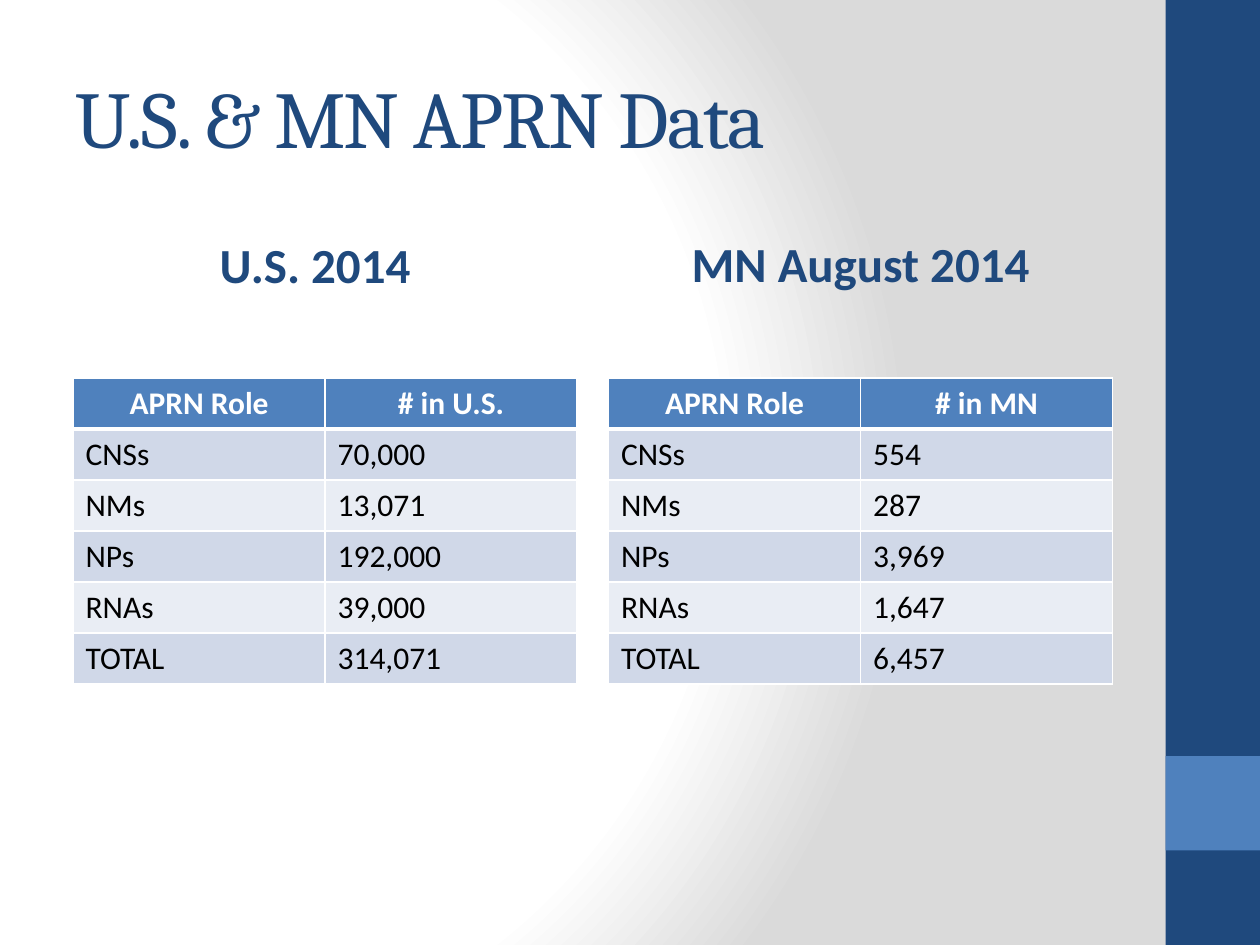
"""Build the slide that sets U.S. and Minnesota APRN counts side by side."""
from dataclasses import dataclass

import pptx
import pptx.dml.color
import pptx.enum.shapes
import pptx.enum.text
import pptx.oxml
import pptx.oxml.ns
import pptx.util

Inches = pptx.util.Inches
Pt = pptx.util.Pt
RGBColor = pptx.dml.color.RGBColor
Align = pptx.enum.text.PP_ALIGN
Anchor = pptx.enum.text.MSO_ANCHOR

NAVY = RGBColor(0x1F, 0x49, 0x7D)
BLUE = RGBColor(0x4F, 0x81, 0xBD)
BAND = RGBColor(0xD0, 0xD8, 0xE8)
PALE = RGBColor(0xE9, 0xED, 0xF4)
WHITE = RGBColor(0xFF, 0xFF, 0xFF)
BLACK = RGBColor(0x00, 0x00, 0x00)
GREY = RGBColor(0xDA, 0xDA, 0xDA)

ROLES = ("CNSs", "NMs", "NPs", "RNAs", "TOTAL")
ROW = 0.405


@dataclass(frozen=True)
class Style:
    font: str
    size: float
    color: RGBColor
    bold: bool = False


@dataclass(frozen=True)
class Label:
    text: str
    box: tuple[float, float, float, float]
    style: Style
    anchor: Anchor
    align: Align
    space: float = 0


@dataclass(frozen=True)
class Grid:
    left: float
    head: str
    counts: tuple[str, ...]


@dataclass(frozen=True)
class Block:
    top: float
    height: float
    color: RGBColor


TITLE = Style("Cambria", 46, NAVY)
SUB = Style("Calibri", 28, NAVY, True)
HEAD = Style("Calibri", 18, WHITE, True)
BODY = Style("Calibri", 18, BLACK)

BLOCKS = (Block(0, 7.5, NAVY), Block(6, 0.75, BLUE))
LABELS = (
    Label("U.S. & MN APRN Data", (0.5, 0.3, 8.33, 1.25), TITLE, Anchor.MIDDLE, Align.LEFT, -1),
    Label("U.S. 2014", (0.5, 1.68, 4, 0.7), SUB, Anchor.BOTTOM, Align.CENTER),
    Label("MN August 2014", (4.83, 1.67, 4, 0.7), SUB, Anchor.BOTTOM, Align.CENTER),
)
GRIDS = (
    Grid(0.58, "# in U.S.", ("70,000", "13,071", "192,000", "39,000", "314,071")),
    Grid(4.83, "# in MN", ("554", "287", "3,969", "1,647", "6,457")),
)


def paint(slide) -> None:
    stops = "".join(
        f'<a:gs pos="{pos * 1000}"><a:srgbClr val="{color}"/></a:gs>'
        for pos, color in ((0, WHITE), (75, WHITE), (100, GREY))
    )
    back = pptx.oxml.parse_xml(
        f'<p:bg {pptx.oxml.ns.nsdecls("p", "a")}><p:bgPr><a:gradFill rotWithShape="1">'
        f'<a:gsLst>{stops}</a:gsLst><a:path path="circle">'
        '<a:fillToRect l="20000" t="50000" r="100000" b="50000"/></a:path>'
        '</a:gradFill><a:effectLst/></p:bgPr></p:bg>'
    )
    slide.element.cSld.insert(0, back)


def write(frame, text: str, style: Style, align: Align) -> None:
    frame.text = text
    para = frame.paragraphs[0]
    para.alignment = align
    font = para.runs[0].font
    font.name, font.size, font.bold = style.font, Pt(style.size), style.bold
    font.color.rgb = style.color


def add_block(slide, block: Block) -> None:
    rect = slide.shapes.add_shape(
        pptx.enum.shapes.MSO_SHAPE.RECTANGLE,
        Inches(9.25), Inches(block.top), Inches(0.75), Inches(block.height),
    )
    rect.shadow.inherit = False
    rect.fill.solid()
    rect.fill.fore_color.rgb = block.color
    rect.line.fill.background()


def add_label(slide, label: Label) -> None:
    frame = slide.shapes.add_textbox(*map(Inches, label.box)).text_frame
    frame.word_wrap = True
    frame.vertical_anchor = label.anchor
    write(frame, label.text, label.style, label.align)
    if label.space:
        props = frame.paragraphs[0].runs[0].font._element
        props.set("spc", str(round(label.space * 100)))


def add_edges(cell, base: float) -> None:
    props = cell._tc.get_or_add_tcPr()
    for side, width in (("L", 1), ("R", 1), ("T", 1), ("B", base)):
        props.append(pptx.oxml.parse_xml(
            f'<a:ln{side} {pptx.oxml.ns.nsdecls("a")} w="{Pt(width)}">'
            f'<a:solidFill><a:srgbClr val="{WHITE}"/></a:solidFill></a:ln{side}>'
        ))


def add_grid(slide, grid: Grid) -> None:
    rows = [("APRN Role", grid.head), *zip(ROLES, grid.counts)]
    table = slide.shapes.add_table(
        len(rows), 2, Inches(grid.left), Inches(3), Inches(4), Inches(ROW * len(rows))
    ).table
    for r, row in enumerate(rows):
        table.rows[r].height = Inches(ROW)
        top = r == 0
        fill = BLUE if top else BAND if r % 2 else PALE
        for c, text in enumerate(row):
            cell = table.cell(r, c)
            write(cell.text_frame, text, HEAD if top else BODY, Align.CENTER if top else Align.LEFT)
            add_edges(cell, 3 if top else 1)
            cell.fill.solid()
            cell.fill.fore_color.rgb = fill


def main() -> None:
    deck = pptx.Presentation()
    deck.slide_width, deck.slide_height = Inches(10), Inches(7.5)
    slide = deck.slides.add_slide(deck.slide_layouts[6])
    paint(slide)
    for block in BLOCKS:
        add_block(slide, block)
    for label in LABELS:
        add_label(slide, label)
    for grid in GRIDS:
        add_grid(slide, grid)
    deck.save("out.pptx")


if __name__ == "__main__":
    main()
